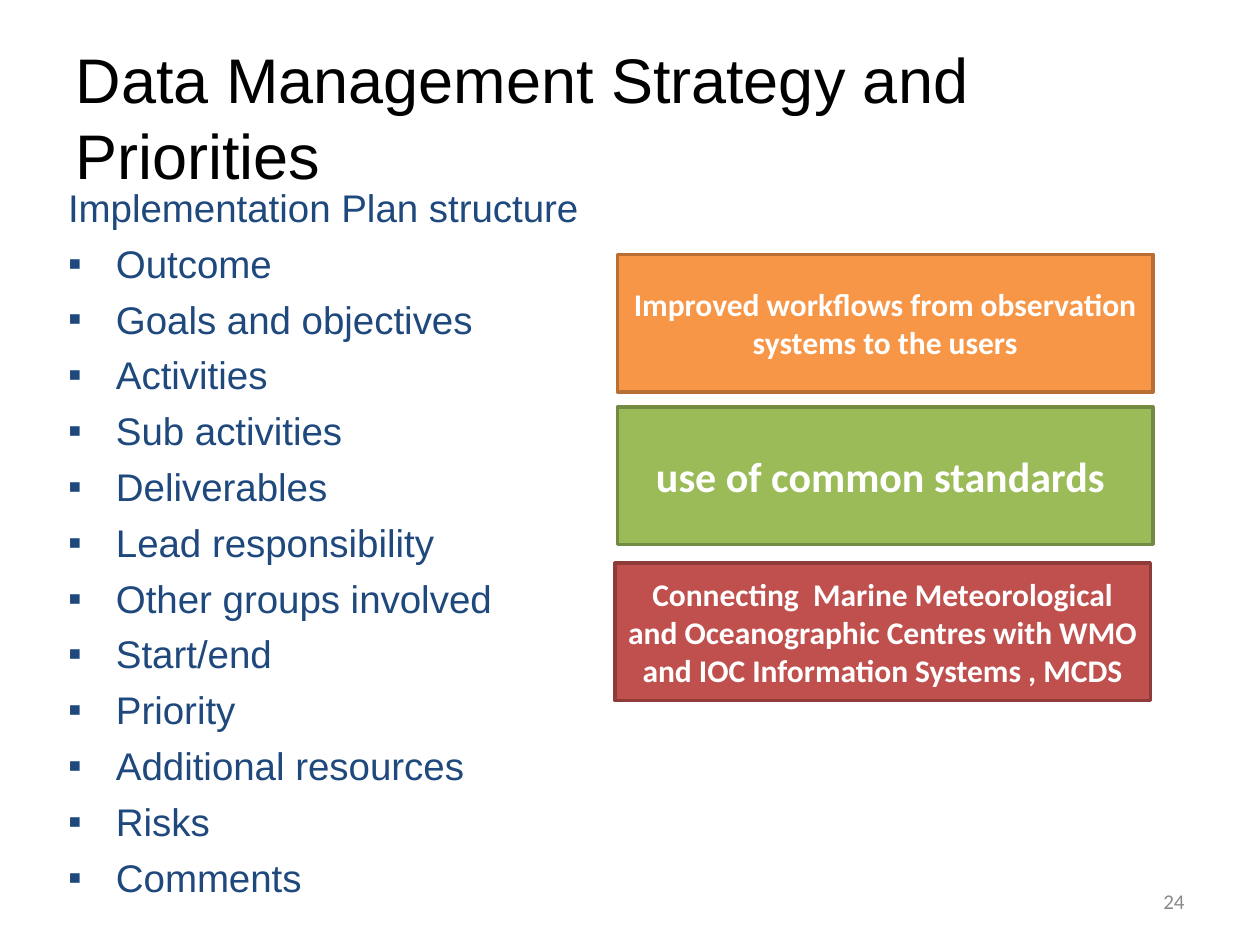
"""Build the slide on data management strategy and priorities."""
from lxml import etree
from pptx import Presentation
from pptx.dml.color import RGBColor
from pptx.enum.shapes import MSO_SHAPE
from pptx.enum.text import MSO_ANCHOR, MSO_AUTO_SIZE, PP_ALIGN
from pptx.oxml.ns import qn
from pptx.util import Inches, Pt

RECT = MSO_SHAPE.RECTANGLE
TOP, MIDDLE = MSO_ANCHOR.TOP, MSO_ANCHOR.MIDDLE
LEFT, CENTER, RIGHT = PP_ALIGN.LEFT, PP_ALIGN.CENTER, PP_ALIGN.RIGHT
FIXED = MSO_AUTO_SIZE.NONE

BLACK = RGBColor(0x00, 0x00, 0x00)
WHITE = RGBColor(0xFF, 0xFF, 0xFF)
GRAY = RGBColor(0x89, 0x89, 0x89)
NAVY = RGBColor(0x1F, 0x49, 0x7D)
ORANGE = RGBColor(0xF7, 0x96, 0x46)
RUST = RGBColor(0xB7, 0x6F, 0x34)
GREEN = RGBColor(0x9B, 0xBB, 0x59)
OLIVE = RGBColor(0x73, 0x8A, 0x42)
RED = RGBColor(0xC0, 0x50, 0x4D)
MAROON = RGBColor(0x8E, 0x3B, 0x39)

TITLE = {"name": "Arial", "size": Pt(36), "bold": False}
LIST = {"name": "Arial", "size": Pt(22), "bold": False}
NUMBER = {"name": "Calibri", "size": Pt(12), "bold": False}
ITEMS = ["Outcome", "Goals and objectives", "Activities", "Sub activities",
         "Deliverables", "Lead responsibility", "Other groups involved",
         "Start/end", "Priority", "Additional resources", "Risks", "Comments"]
BOXES = [
    (4.9, 2.02, ORANGE, RUST, 18,
     "Improved workflows from observation systems to the users"),
    (4.9, 3.23, GREEN, OLIVE, 24, "use of common standards "),
    (4.88, 4.47, RED, MAROON, 18,
     "Connecting  Marine Meteorological and Oceanographic Centres "
     "with WMO and IOC Information Systems , MCDS"),
]


def place(shape, left, top, width, height, anchor):
    shape.left, shape.top = Inches(left), Inches(top)
    shape.width, shape.height = Inches(width), Inches(height)
    frame = shape.text_frame
    frame.word_wrap = True
    frame.auto_size = FIXED
    frame.vertical_anchor = anchor
    return frame


def write(para, text, style, color, align):
    para.text = text
    para.alignment = align
    font = para.runs[0].font
    for key, value in style.items():
        setattr(font, key, value)
    font.color.rgb = color


prs = Presentation()
prs.slide_width, prs.slide_height = Inches(10), Inches(7.5)
slide = prs.slides.add_slide(prs.slide_layouts[1])

frame = place(slide.shapes.title, 0.5, 0.3, 9, 1.25, MIDDLE)
write(frame.paragraphs[0], "Data Management Strategy and Priorities",
      TITLE, BLACK, LEFT)

number = slide.shapes.add_textbox(0, 0, 0, 0)
frame = place(number, 7.17, 6.95, 2.33, 0.4, MIDDLE)
write(frame.paragraphs[0], "24", NUMBER, GRAY, RIGHT)

frame = place(slide.placeholders[1], 0.44, 1.41, 4.44, 4.95, TOP)
head = frame.paragraphs[0]
props = head._p.get_or_add_pPr()
props.set("marL", "0")
props.set("indent", "0")
etree.SubElement(props, qn("a:buNone"))
head.space_before = Pt(0)
write(head, "Implementation Plan structure", LIST, NAVY, LEFT)

for item in ITEMS:
    para = frame.add_paragraph()
    props = para._p.get_or_add_pPr()
    props.set("marL", str(Inches(0.38)))
    props.set("indent", str(Inches(-0.38)))
    etree.SubElement(props, qn("a:buFont"), typeface="Arial")
    etree.SubElement(props, qn("a:buChar"), char="▪")
    para.space_before = Pt(5.5)
    write(para, item, LIST, NAVY, LEFT)

for left, top, fill, edge, size, text in BOXES:
    box = slide.shapes.add_shape(RECT, 0, 0, 0, 0)
    box.shadow.inherit = False
    box.fill.solid()
    box.fill.fore_color.rgb = fill
    box.line.color.rgb = edge
    box.line.width = Pt(2)
    frame = place(box, left, top, 4.25, 1.09, MIDDLE)
    style = {"name": "Calibri", "size": Pt(size), "bold": True}
    write(frame.paragraphs[0], text, style, WHITE, CENTER)

prs.save("out.pptx")
